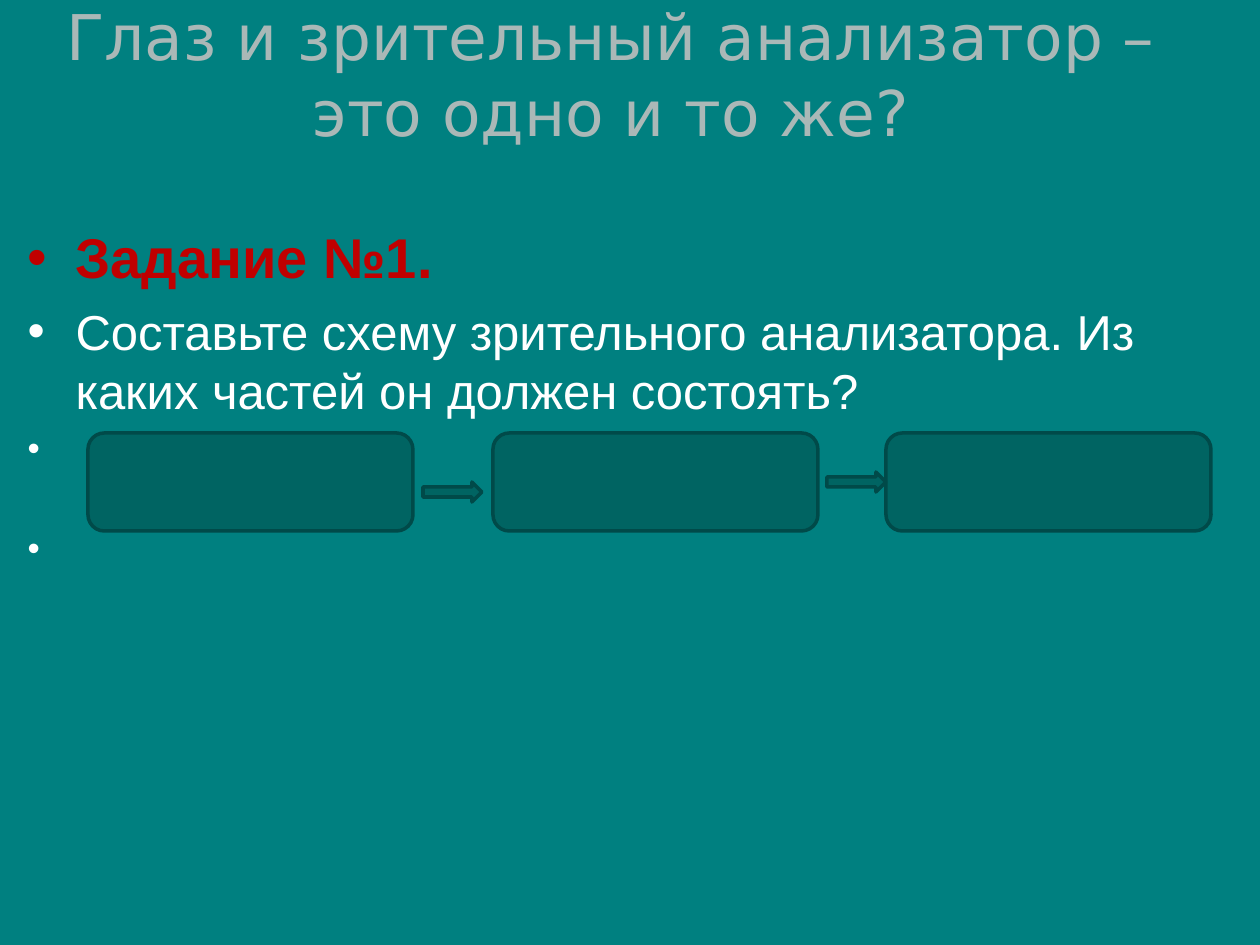
from dataclasses import dataclass

from lxml.etree import SubElement
from pptx import Presentation
from pptx.dml.color import RGBColor
from pptx.enum.shapes import MSO_SHAPE as Preset
from pptx.enum.text import MSO_ANCHOR as Anchor, MSO_AUTO_SIZE as AutoSize, PP_ALIGN as Align
from pptx.oxml.ns import qn
from pptx.util import Emu, Pt

PX_PER_INCH = 126
TEAL, DEEP_TEAL, OUTLINE = "008080", "006462", "004A49"
SILVER, RED, WHITE = "AAB8B7", "C00000", "FFFFFF"


@dataclass(frozen=True)
class Bullet:
    text: str
    size: int
    space_before: float
    color: str = WHITE
    bold: bool = False


@dataclass(frozen=True)
class Block:
    preset: Preset
    left: int
    top: int
    width: int
    height: int


def px(length: int) -> Emu:
    return Emu(round(length * 914400 / PX_PER_INCH))


def rgb(value: str) -> RGBColor:
    return RGBColor.from_string(value)


def place(shape, left: int, top: int, width: int, height: int) -> None:
    shape.left, shape.top = px(left), px(top)
    shape.width, shape.height = px(width), px(height)


def add_run(paragraph, text: str, font: str, size: int, color: str, bold: bool = False) -> None:
    run = paragraph.add_run()
    run.text = text
    run.font.name = font
    run.font.size = Pt(size)
    run.font.bold = bold
    run.font.color.rgb = rgb(color)


def add_bullet(paragraph, bullet: Bullet) -> None:
    properties = paragraph._p.get_or_add_pPr()
    properties.set("marL", str(px(48)))
    properties.set("indent", str(-px(48)))
    SubElement(properties, qn("a:buFont"), typeface="Arial")
    SubElement(properties, qn("a:buChar"), char="•")
    paragraph.alignment = Align.LEFT
    paragraph.space_before = Pt(bullet.space_before)
    add_run(paragraph, bullet.text, "Arial", bullet.size, bullet.color, bullet.bold)


def add_block(slide, block: Block) -> None:
    shape = slide.shapes.add_shape(
        block.preset, px(block.left), px(block.top), px(block.width), px(block.height)
    )
    shape.shadow.inherit = False
    shape.fill.solid()
    shape.fill.fore_color.rgb = rgb(DEEP_TEAL)
    shape.line.color.rgb = rgb(OUTLINE)
    shape.line.width = Pt(2)


TASK = [
    Bullet("Задание №1.", 32, 0, RED, True),
    Bullet("Составьте схему зрительного анализатора. Из каких частей он должен состоять?", 28, 6.5),
    Bullet("\N{NO-BREAK SPACE}", 20, 5),
    Bullet("\N{NO-BREAK SPACE}", 20, 33),
]
ANALYZER_PARTS = [Block(Preset.ROUNDED_RECTANGLE, left, 433, 325, 98) for left in (88, 493, 886)]
TRANSITIONS = [
    Block(Preset.RIGHT_ARROW, left, top, 59, 20) for left, top in ((423, 482), (827, 472))
]


def main() -> None:
    presentation = Presentation()
    presentation.slide_width, presentation.slide_height = px(1260), px(945)
    slide = presentation.slides.add_slide(presentation.slide_layouts[1])
    slide.background.fill.solid()
    slide.background.fill.fore_color.rgb = rgb(TEAL)

    question = slide.shapes.title
    place(question, 25, 0, 1172, 147)
    question.text_frame.auto_size = AutoSize.NONE
    question.text_frame.vertical_anchor = Anchor.MIDDLE
    heading = question.text_frame.paragraphs[0]
    heading.alignment = Align.CENTER
    add_run(heading, "Глаз и зрительный анализатор – это одно и то же?", "DejaVu Sans", 36, SILVER)

    task = slide.placeholders[1]
    place(task, 15, 157, 1230, 761)
    task.text_frame.auto_size = AutoSize.NONE
    task.text_frame.vertical_anchor = Anchor.TOP
    task.text_frame.margin_top = px(66)
    for index, bullet in enumerate(TASK):
        frame = task.text_frame
        add_bullet(frame.add_paragraph() if index else frame.paragraphs[0], bullet)

    for block in ANALYZER_PARTS + TRANSITIONS:
        add_block(slide, block)

    presentation.save("out.pptx")


if __name__ == "__main__":
    main()
